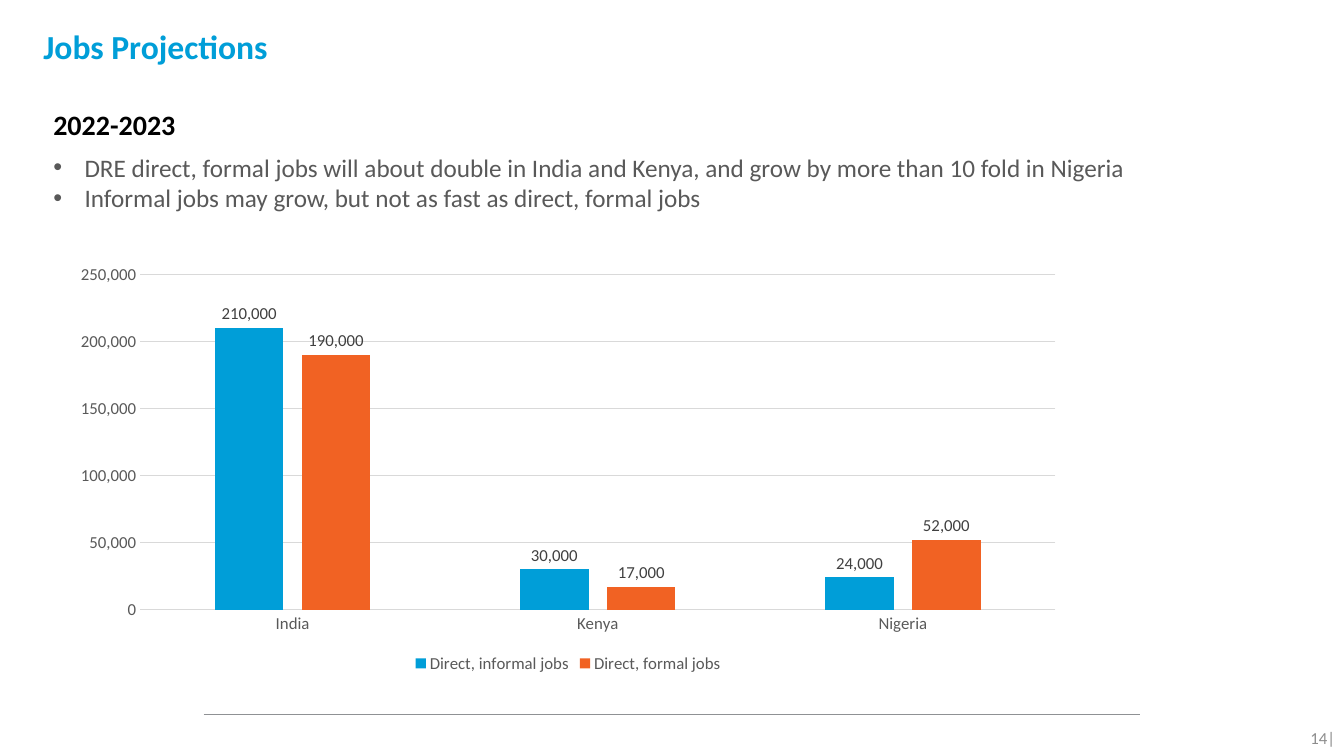
from lxml import etree
from pptx import Presentation
from pptx.chart.data import CategoryChartData
from pptx.dml.color import RGBColor
from pptx.enum.chart import XL_CHART_TYPE, XL_LABEL_POSITION, XL_LEGEND_POSITION, XL_TICK_MARK
from pptx.enum.shapes import MSO_CONNECTOR
from pptx.enum.text import MSO_ANCHOR, PP_ALIGN
from pptx.oxml.ns import qn
from pptx.util import Inches, Pt

COLUMNS = XL_CHART_TYPE.COLUMN_CLUSTERED
OUTSIDE_END = XL_LABEL_POSITION.OUTSIDE_END
BOTTOM = XL_LEGEND_POSITION.BOTTOM
NO_TICK = XL_TICK_MARK.NONE
STRAIGHT = MSO_CONNECTOR.STRAIGHT
TOP, MIDDLE = MSO_ANCHOR.TOP, MSO_ANCHOR.MIDDLE
LEFT, RIGHT = PP_ALIGN.LEFT, PP_ALIGN.RIGHT

FONT = "Calibri"
NUMBER_FORMAT = "#,##0"
COLORS = {
    "blue": "009ED8", "orange": "F16223", "black": "000000", "body": "595959",
    "label": "404040", "grid": "D9D9D9", "rule": "8F9194", "number": "8C8C8C",
}
COUNTRIES = ["India", "Kenya", "Nigeria"]
JOBS = [
    ("Direct, informal jobs", "blue", [210000, 30000, 24000]),
    ("Direct, formal jobs", "orange", [190000, 17000, 52000]),
]
POINTS = [
    "DRE direct, formal jobs will about double in India and Kenya, "
    "and grow by more than 10 fold in Nigeria",
    "Informal jobs may grow, but not as fast as direct, formal jobs",
]


def rgb(name):
    return RGBColor.from_string(COLORS[name])


class SlideBuilder:
    def __init__(self, slide):
        self.slide = slide

    def style_font(self, font, size, color, bold=False):
        font.name = FONT
        font.size = Pt(size)
        font.bold = bold
        font.color.rgb = rgb(color)

    def style_line(self, line, color):
        line.color.rgb = rgb(color)
        line.width = Pt(0.75)

    def place(self, shape, left, top, width, height):
        shape.left, shape.top = Inches(left), Inches(top)
        shape.width, shape.height = Inches(width), Inches(height)

    def fill_text(self, frame, lines, size, color, bold=False, align=LEFT, bullet=False):
        frame.word_wrap = True
        for index, line in enumerate(lines):
            paragraph = frame.add_paragraph() if index else frame.paragraphs[0]
            paragraph.alignment = align
            if bullet:
                self.add_bullet(paragraph)
            run = paragraph.add_run()
            run.text = line
            self.style_font(run.font, size, color, bold)

    def add_bullet(self, paragraph):
        properties = paragraph._p.get_or_add_pPr()
        indent = Inches(0.31)
        properties.set("marL", str(indent))
        properties.set("indent", str(-indent))
        etree.SubElement(properties, qn("a:buFont")).set("typeface", "Arial")
        etree.SubElement(properties, qn("a:buChar")).set("char", "•")

    def title(self, text, box, size, color):
        title = self.slide.shapes.title
        self.place(title, *box)
        frame = title.text_frame
        frame.margin_left = frame.margin_right = 0
        frame.vertical_anchor = TOP
        self.fill_text(frame, [text], size, color, bold=True)

    def text(self, lines, box, size, color, anchor=TOP, **options):
        shape = self.slide.shapes.add_textbox(*map(Inches, box))
        shape.text_frame.vertical_anchor = anchor
        self.fill_text(shape.text_frame, lines, size, color, **options)

    def rule(self, start, end, color):
        connector = self.slide.shapes.add_connector(STRAIGHT, *map(Inches, start + end))
        self.style_line(connector.line, color)
        etree.SubElement(connector._element.spPr, qn("a:effectLst"))

    def column_chart(self, categories, series_rows, box):
        data = CategoryChartData(number_format=NUMBER_FORMAT)
        data.categories = categories
        for name, _, values in series_rows:
            data.add_series(name, values)
        chart = self.slide.shapes.add_chart(COLUMNS, *map(Inches, box), data).chart
        chart.has_title = False
        self.style_font(chart.font, 10, "black")

        # Columns and their labels
        plot = chart.plots[0]
        plot.gap_width, plot.overlap = 219, -27
        plot.vary_by_categories = False
        for series, (_, color, _) in zip(plot.series, series_rows):
            series.format.fill.solid()
            series.format.fill.fore_color.rgb = rgb(color)
            labels = series.data_labels
            labels.show_value = True
            labels.position = OUTSIDE_END
            labels.number_format = NUMBER_FORMAT
            labels.number_format_is_linked = False
            self.style_font(labels.font, 12, "label")

        # Axes
        for axis in (chart.category_axis, chart.value_axis):
            axis.major_tick_mark = axis.minor_tick_mark = NO_TICK
            self.style_font(axis.tick_labels.font, 12, "body")
        self.style_line(chart.category_axis.format.line, "grid")
        value_axis = chart.value_axis
        value_axis.format.line.fill.background()
        value_axis.minimum_scale, value_axis.maximum_scale = 0, 250000
        value_axis.major_unit = 50000
        value_axis.has_major_gridlines = True
        self.style_line(value_axis.major_gridlines.format.line, "grid")
        value_axis.tick_labels.number_format = NUMBER_FORMAT
        value_axis.tick_labels.number_format_is_linked = False

        # Legend
        chart.has_legend = True
        chart.legend.position = BOTTOM
        chart.legend.include_in_layout = False
        self.style_font(chart.legend.font, 12, "body")


def main():
    presentation = Presentation()
    presentation.slide_width = Inches(13.33)
    presentation.slide_height = Inches(7.5)
    builder = SlideBuilder(presentation.slides.add_slide(presentation.slide_layouts[5]))

    # Footer
    builder.rule((2.02, 7.09), (11.31, 7.09), "rule")
    builder.text(["14|"], (12.49, 7.12, 0.85, 0.4), 12, "number", anchor=MIDDLE, align=RIGHT)

    # Heading and key points
    builder.title("Jobs Projections", (0.43, 0.21, 12.34, 0.87), 24, "blue")
    builder.text(["2022-2023"], (0.43, 1.02, 8.98, 0.44), 20, "black", bold=True)
    builder.text(POINTS, (0.43, 1.46, 11.48, 0.71), 18, "body", bullet=True)

    # Jobs by country
    builder.column_chart(COUNTRIES, JOBS, (0.6, 2.54, 10.07, 4.18))

    presentation.save("out.pptx")


if __name__ == "__main__":
    main()
